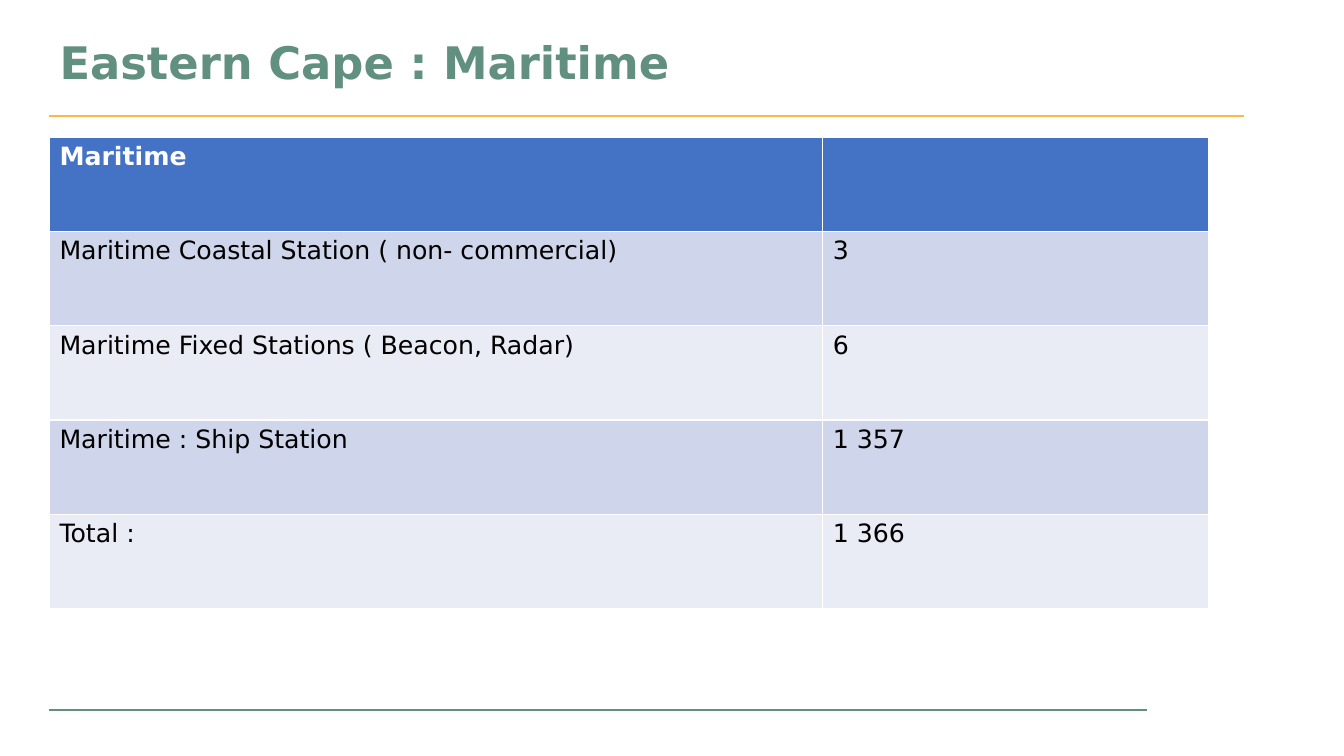
"""Build the Eastern Cape maritime licence slide."""
from lxml import etree
from pptx import Presentation, util as u
from pptx.dml.color import RGBColor
from pptx.enum import shapes, text
from pptx.oxml.ns import qn

FONT = "DejaVu Sans"
HUES = {
    "green": "629080",
    "gold": "FDB945",
    "head": "4472C4",
    "odd": "CFD5EA",
    "even": "E9EBF5",
    "white": "FFFFFF",
    "black": "000000",
}
LEFT, WIDTH = 0.49, 11.5
ROWS = [
    ("Maritime", ""),
    ("Maritime Coastal Station ( non- commercial)", "3"),
    ("Maritime Fixed Stations ( Beacon, Radar)", "6"),
    ("Maritime : Ship Station", "1 357"),
    ("Total :", "1 366"),
]


def hue(name):
    return RGBColor.from_string(HUES[name])


def write(frame, words, size=18, color="black", bold=False, space=1.0):
    frame.text = words
    para = frame.paragraphs[0]
    para.alignment = text.PP_ALIGN.LEFT
    para.line_spacing = space
    font = para.font
    font.name, font.size, font.bold = FONT, u.Pt(size), bold
    font.color.rgb = hue(color)


def add_title(slide, words):
    title = slide.shapes.title
    title.left, title.top = u.Inches(LEFT), u.Inches(0.32)
    title.width, title.height = u.Inches(WIDTH), u.Inches(0.64)
    frame = title.text_frame
    frame.auto_size = text.MSO_AUTO_SIZE.NONE
    frame.vertical_anchor = text.MSO_ANCHOR.MIDDLE
    write(frame, words, size=32, color="green", bold=True, space=0.9)


def add_rule(slide, y, end, color):
    rule = slide.shapes.add_connector(
        shapes.MSO_CONNECTOR.STRAIGHT,
        u.Inches(LEFT), u.Inches(y), u.Inches(end), u.Inches(y))
    rule.line.color.rgb = hue(color)
    rule.line.width = u.Pt(1.5)
    etree.SubElement(rule._element.spPr, qn("a:effectLst"))


def add_grid(slide, rows):
    grid = slide.shapes.add_table(
        len(rows), 2, u.Inches(LEFT), u.Inches(1.36),
        u.Inches(WIDTH), u.Inches(4.68)).table
    grid.columns[0].width = u.Inches(7.67)
    grid.columns[1].width = u.Inches(3.83)
    for r, row in enumerate(rows):
        head = r == 0
        fill = "head" if head else "odd" if r % 2 else "even"
        for c, words in enumerate(row):
            cell = grid.cell(r, c)
            cell.fill.solid()
            cell.fill.fore_color.rgb = hue(fill)
            write(cell.text_frame, words, bold=head,
                  color="white" if head else "black")


def main():
    deck = Presentation()
    deck.slide_width, deck.slide_height = u.Inches(13.33), u.Inches(7.5)
    slide = deck.slides.add_slide(deck.slide_layouts[5])
    add_rule(slide, 1.15, 12.34, "gold")
    add_rule(slide, 7.04, 11.38, "green")
    add_title(slide, "Eastern Cape : Maritime")
    add_grid(slide, ROWS)
    deck.save("out.pptx")


if __name__ == "__main__":
    main()
